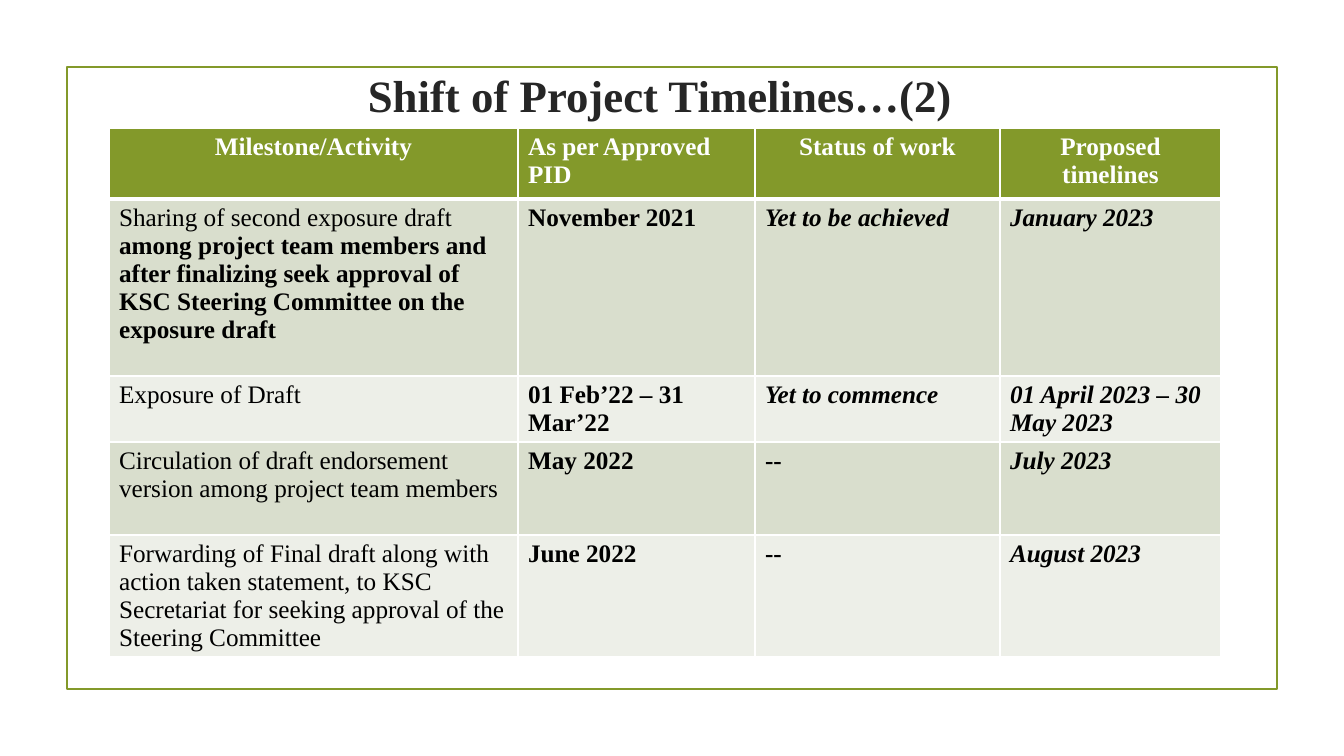
"""Build the slide on the shift of project timelines."""
from dataclasses import dataclass

from lxml.etree import SubElement
from pptx import Presentation
from pptx.dml.color import RGBColor as Rgb
from pptx.enum.shapes import MSO_SHAPE as Shape
from pptx.enum.text import MSO_ANCHOR as Anchor, MSO_AUTO_SIZE as Fit, PP_ALIGN as Align
from pptx.oxml.ns import qn
from pptx.util import Emu, Pt


@dataclass(frozen=True)
class Theme:
    font: str = "Times New Roman"
    green: str = "83992A"
    title: str = "262626"
    ink: str = "000000"
    white: str = "FFFFFF"
    bands: tuple[str, str] = ("D9DECD", "EDEFE8")
    head: int = 32
    body: int = 18


@dataclass(frozen=True)
class Piece:
    text: str
    bold: bool = True
    slant: bool = False


@dataclass(frozen=True)
class Cell:
    words: tuple[Piece, ...]
    align: Align = Align.LEFT


@dataclass(frozen=True)
class Row:
    height: int
    cells: tuple[Cell, ...]


THEME = Theme()
WIDTHS = (409, 237, 245, 221)


def px(num: int) -> Emu:
    return Emu(round(num * 914400 / 100.8))


def style(run, size: int, color: str, bold: bool = True, slant: bool = False) -> None:
    font = run.font
    font.name, font.size = THEME.font, Pt(size)
    font.bold, font.italic = bold, slant
    font.color.rgb = Rgb.from_string(color)


def label(text: str, align: Align = Align.CENTER) -> Cell:
    return Cell((Piece(text),), align)


def task(height: int, name: str, due: str, state: str, plan: str, more: str = "") -> Row:
    first = (Piece(name, False), Piece(more)) if more else (Piece(name, False),)
    return Row(height, (
        Cell(first),
        Cell((Piece(due),)),
        Cell((Piece(state, slant=state != "--"),)),
        Cell((Piece(plan, slant=True),)),
    ))


ROWS = (
    Row(71, (
        label("Milestone/Activity"),
        label("As per Approved PID", Align.LEFT),
        label("Status of work"),
        label("Proposed timelines"),
    )),
    task(177, "Sharing of second exposure draft ", "November 2021",
         "Yet to be achieved", "January 2023",
         "among project team members and after finalizing seek approval of "
         "KSC Steering Committee on the exposure draft"),
    task(66, "Exposure of Draft", "01 Feb’22 – 31 Mar’22",
         "Yet to commence", "01 April 2023 – 30 May 2023"),
    task(93, "Circulation of draft endorsement version among project team members",
         "May 2022", "--", "July 2023"),
    task(121, "Forwarding of Final draft along with action taken statement, to KSC "
         "Secretariat for seeking approval of the Steering Committee",
         "June 2022", "--", "August 2023"),
)


def edge(box, side: str, width: int) -> None:
    line = SubElement(box._tc.get_or_add_tcPr(), qn(f"a:{side}"), w=str(Pt(width)))
    fill = SubElement(line, qn("a:solidFill"))
    SubElement(fill, qn("a:srgbClr"), val=THEME.white)


def draw_cell(box, cell: Cell, index: int) -> None:
    thick = {"lnB": 3} if index == 0 else {"lnT": 3} if index == 1 else {}
    for side in ("lnL", "lnR", "lnT", "lnB"):
        edge(box, side, thick.get(side, 1))
    box.fill.solid()
    back = THEME.bands[(index - 1) % 2] if index else THEME.green
    box.fill.fore_color.rgb = Rgb.from_string(back)
    para = box.text_frame.paragraphs[0]
    para.alignment = cell.align
    for piece in cell.words:
        run = para.add_run()
        run.text = piece.text
        style(run, THEME.body, THEME.ink if index else THEME.white, piece.bold, piece.slant)


def draw_table(slide, rows: tuple[Row, ...]) -> None:
    height = sum(row.height for row in rows)
    frame = slide.shapes.add_table(len(rows), len(WIDTHS), px(109), px(128),
                                   px(sum(WIDTHS)), px(height))
    table = frame.table
    for col, width in zip(table.columns, WIDTHS):
        col.width = px(width)
    for index, row in enumerate(rows):
        table.rows[index].height = px(row.height)
        for col, cell in enumerate(row.cells):
            draw_cell(table.cell(index, col), cell, index)


def draw_frame(slide) -> None:
    frame = slide.shapes.add_shape(Shape.RECTANGLE, px(67), px(67), px(1210), px(622))
    frame.shadow.inherit = False
    frame.fill.background()
    frame.line.color.rgb = Rgb.from_string(THEME.green)
    frame.line.width = Pt(1.25)


def draw_title(slide, text: str) -> None:
    title = slide.shapes.title
    title.left, title.top, title.width, title.height = map(px, (131, 62, 1058, 66))
    frame = title.text_frame
    frame.text = text
    frame.word_wrap = True
    frame.auto_size = Fit.NONE
    frame.vertical_anchor = Anchor.MIDDLE
    para = frame.paragraphs[0]
    para.alignment = Align.CENTER
    style(para.runs[0], THEME.head, THEME.title)


def main() -> None:
    deck = Presentation()
    deck.slide_width, deck.slide_height = px(1344), px(756)
    slide = deck.slides.add_slide(deck.slide_layouts[5])
    draw_frame(slide)
    draw_title(slide, "Shift of Project Timelines…(2)")
    draw_table(slide, ROWS)
    deck.save("out.pptx")


if __name__ == "__main__":
    main()
